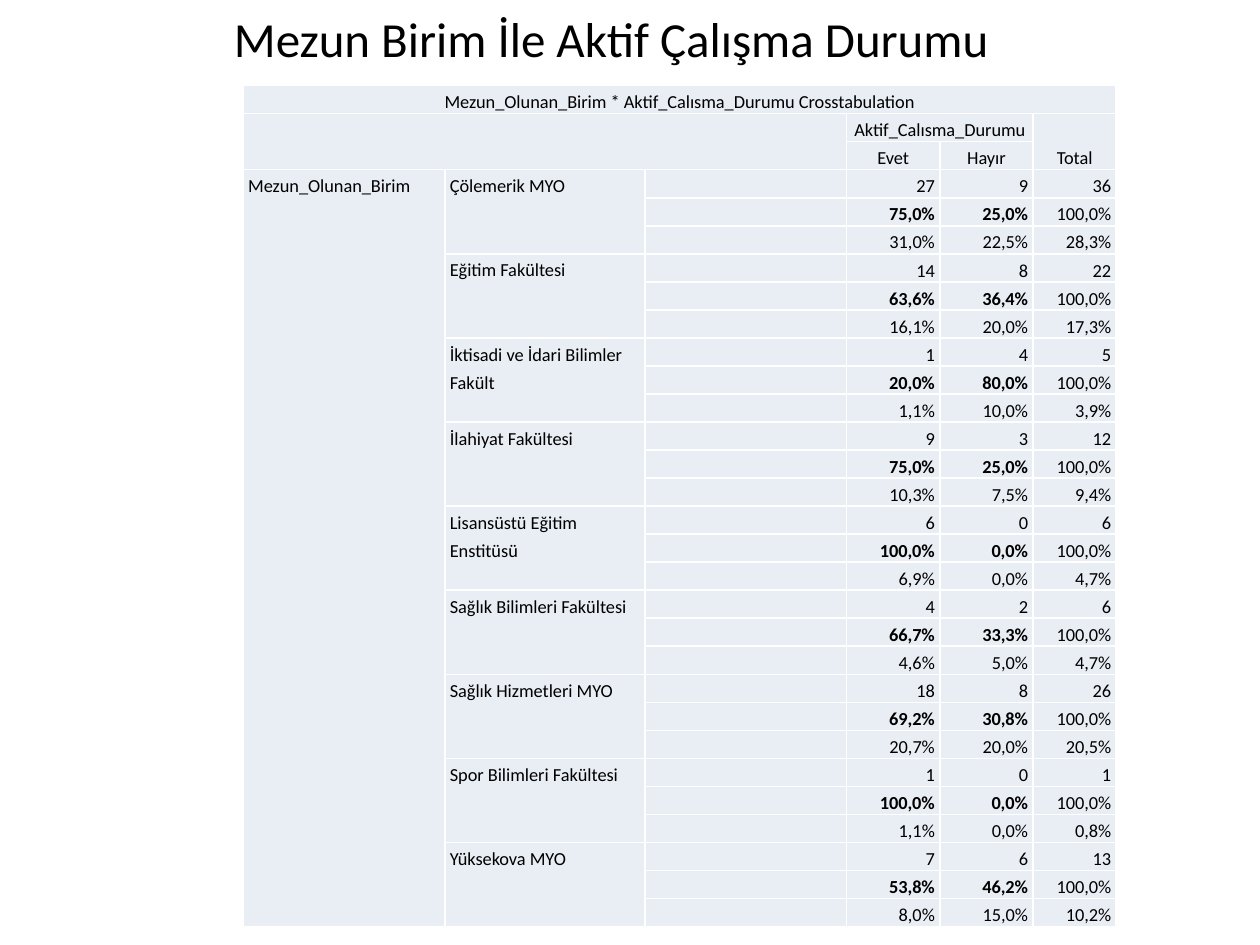
from lxml import etree
from pptx import Presentation
from pptx.dml.color import RGBColor
from pptx.enum.text import MSO_ANCHOR, PP_ALIGN
from pptx.oxml.ns import qn
from pptx.util import Inches, Pt

LEFT, CENTER, RIGHT = PP_ALIGN.LEFT, PP_ALIGN.CENTER, PP_ALIGN.RIGHT
TOP, MIDDLE, BOTTOM = MSO_ANCHOR.TOP, MSO_ANCHOR.MIDDLE, MSO_ANCHOR.BOTTOM

COLORS = {"text": "000000", "cell": "E9EDF4", "border": "FFFFFF"}
FONT = "Calibri"
SIZE = 10.5
INDENT = Inches(0.04)
COLS = [1.6, 1.59, 1.6, 0.74, 0.74, 0.66]
HEAD = 3   # header rows
STEP = 3   # rows for each unit: count, row share, column share
TABLE = {"left": 1.93, "top": 0.68, "width": sum(COLS), "height": 6.67}

UNITS = [
    ("Çölemerik MYO", "27 9 36", "75,0% 25,0% 100,0%", "31,0% 22,5% 28,3%"),
    ("Eğitim Fakültesi", "14 8 22", "63,6% 36,4% 100,0%", "16,1% 20,0% 17,3%"),
    ("İktisadi ve İdari Bilimler Fakült", "1 4 5", "20,0% 80,0% 100,0%", "1,1% 10,0% 3,9%"),
    ("İlahiyat Fakültesi", "9 3 12", "75,0% 25,0% 100,0%", "10,3% 7,5% 9,4%"),
    ("Lisansüstü Eğitim Enstitüsü", "6 0 6", "100,0% 0,0% 100,0%", "6,9% 0,0% 4,7%"),
    ("Sağlık Bilimleri Fakültesi", "4 2 6", "66,7% 33,3% 100,0%", "4,6% 5,0% 4,7%"),
    ("Sağlık Hizmetleri MYO", "18 8 26", "69,2% 30,8% 100,0%", "20,7% 20,0% 20,5%"),
    ("Spor Bilimleri Fakültesi", "1 0 1", "100,0% 0,0% 100,0%", "1,1% 0,0% 0,8%"),
    ("Yüksekova MYO", "7 6 13", "53,8% 46,2% 100,0%", "8,0% 15,0% 10,2%"),
]


def assign(target, values):
    for name, value in values.items():
        setattr(target, name, value)


def style(font, size, bold=False):
    assign(font, {"name": FONT, "size": Pt(size), "bold": bold})
    font.color.rgb = RGBColor.from_string(COLORS["text"])


def add_title(slide, text):
    title = slide.shapes.title
    assign(title, {"left": Inches(0.67), "top": 0,
                   "width": Inches(8.36), "height": Inches(0.61)})
    frame = title.text_frame
    frame.vertical_anchor = MIDDLE
    para = frame.paragraphs[0]
    para.alignment = CENTER
    run = para.add_run()
    run.text = text
    style(run.font, 28)


def add_borders(cell):
    props = cell._tc.get_or_add_tcPr()
    for side in ("a:lnL", "a:lnR", "a:lnT", "a:lnB"):
        line = etree.SubElement(props, qn(side), w=str(Pt(1)))
        fill = etree.SubElement(line, qn("a:solidFill"))
        etree.SubElement(fill, qn("a:srgbClr"), val=COLORS["border"])


def format_cell(cell):
    add_borders(cell)
    cell.fill.solid()
    cell.fill.fore_color.rgb = RGBColor.from_string(COLORS["cell"])
    assign(cell, {"margin_left": 0, "margin_right": 0,
                  "margin_top": 0, "margin_bottom": 0})
    para = cell.text_frame.paragraphs[0]
    para.line_spacing = Pt(16)
    # The end mark keeps empty cells as low as the filled ones.
    etree.SubElement(para._p, qn("a:endParaRPr"), sz=str(int(SIZE * 100)))


def write(cell, text, align=LEFT, anchor=TOP, bold=False):
    cell.vertical_anchor = anchor
    para = cell.text_frame.paragraphs[0]
    para.alignment = align
    props = para._p.get_or_add_pPr()
    for side in ("marL", "marR"):
        props.set(side, str(INDENT))
    props.set("indent", "0")
    run = para.add_run()
    run.text = text
    style(run.font, SIZE, bold)


def add_grid(slide):
    count = HEAD + STEP * len(UNITS)
    box = [Inches(value) for value in TABLE.values()]
    table = slide.shapes.add_table(count, len(COLS), *box).table
    assign(table, {"first_row": False, "horz_banding": False})
    for col, width in zip(table.columns, COLS):
        col.width = Inches(width)
    for row in table.rows:
        row.height = Inches(TABLE["height"] / count)
        for cell in row.cells:
            format_cell(cell)
    return table


def merge(table, row, col, rows, cols):
    table.cell(row, col).merge(table.cell(row + rows - 1, col + cols - 1))


def fill_head(table):
    for span in ((0, 0, 1, 6), (1, 0, 2, 3), (1, 3, 1, 2), (1, 5, 2, 1)):
        merge(table, *span)
    write(table.cell(0, 0), "Mezun_Olunan_Birim * Aktif_Calısma_Durumu Crosstabulation",
          CENTER, MIDDLE)
    for row, col, text in ((1, 3, "Aktif_Calısma_Durumu"), (1, 5, "Total"),
                           (2, 3, "Evet"), (2, 4, "Hayır")):
        write(table.cell(row, col), text, CENTER, BOTTOM)


def fill_units(table):
    merge(table, HEAD, 0, STEP * len(UNITS), 1)
    write(table.cell(HEAD, 0), "Mezun_Olunan_Birim")
    for index, (name, *lines) in enumerate(UNITS):
        first = HEAD + STEP * index
        merge(table, first, 1, STEP, 1)
        write(table.cell(first, 1), name)
        for shift, line in enumerate(lines):
            for col, value in enumerate(line.split(), 3):
                write(table.cell(first + shift, col), value, RIGHT, MIDDLE,
                      bold=shift == 1 and col < 5)


def main():
    deck = Presentation()
    assign(deck, {"slide_width": Inches(10), "slide_height": Inches(7.5)})
    slide = deck.slides.add_slide(deck.slide_layouts[5])
    add_title(slide, "Mezun Birim İle Aktif Çalışma Durumu")
    table = add_grid(slide)
    fill_head(table)
    fill_units(table)
    deck.save("out.pptx")


if __name__ == "__main__":
    main()
